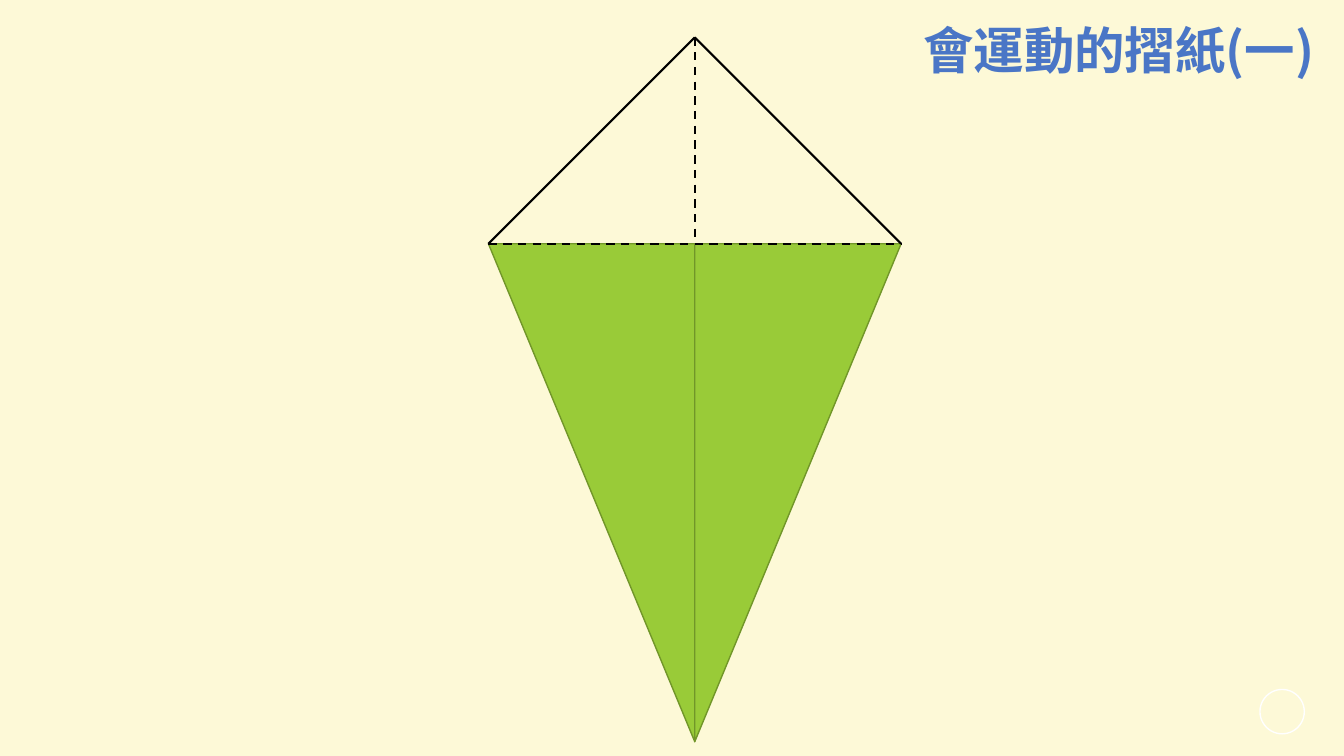
import pptx
import pptx.dml.color
import pptx.enum.dml
import pptx.enum.shapes
import pptx.oxml
import pptx.oxml.ns
import pptx.util

Pt = pptx.util.Pt
RGBColor = pptx.dml.color.RGBColor

CREAM = RGBColor(0xFD, 0xF9, 0xD7)
WHITE = RGBColor(0xFF, 0xFF, 0xFF)
BLACK = RGBColor(0x00, 0x00, 0x00)
BLUE = RGBColor(0x4A, 0x76, 0xC6)
GREEN = RGBColor(0x99, 0xCB, 0x38)
DARK_GREEN = RGBColor(0x71, 0x96, 0x29)
FONT = "Noto Sans CJK SC"

# Corners of the folded kite, in points
CENTER_X, HALF_WIDTH, FOLD_Y = 496.3, 147.4, 174.1
TOP = (CENTER_X, FOLD_Y - HALF_WIDTH)
LEFT = (CENTER_X - HALF_WIDTH, FOLD_Y)
MIDDLE = (CENTER_X, FOLD_Y)
RIGHT = (CENTER_X + HALF_WIDTH, FOLD_Y)
BOTTOM = (CENTER_X, 529.8)


def to_points(corner):
    return tuple(Pt(value) for value in corner)


def add_text(slide, text, left, top, width, height, size, color, bold=False, spacing=1.0):
    box = slide.shapes.add_textbox(Pt(left), Pt(top), Pt(width), Pt(height))
    box.text_frame.word_wrap = True
    para = box.text_frame.paragraphs[0]
    para.line_spacing = spacing
    span = para.add_run()
    span.text = text
    span.font.size = Pt(size)
    span.font.bold = bold
    span.font.color.rgb = color
    span.font.name = FONT
    # East Asian characters take their own typeface entry
    east_asian = pptx.oxml.parse_xml(
        f'<a:ea {pptx.oxml.ns.nsdecls("a")} typeface="{FONT}"/>')
    span.font._element.find(pptx.oxml.ns.qn("a:latin")).addnext(east_asian)


def add_edge(slide, start, end, dashed=False):
    edge = slide.shapes.add_connector(
        pptx.enum.shapes.MSO_CONNECTOR.STRAIGHT, *to_points(start), *to_points(end))
    edge.line.color.rgb = BLACK
    edge.line.width = Pt(1.5)
    if dashed:
        edge.line.dash_style = pptx.enum.dml.MSO_LINE.DASH
    edge._element.spPr.append(
        pptx.oxml.parse_xml(f'<a:effectLst {pptx.oxml.ns.nsdecls("a")}/>'))


def add_flap(slide, *corners):
    first, *others = [to_points(corner) for corner in corners]
    builder = slide.shapes.build_freeform(*first)
    builder.add_line_segments(others, close=True)
    flap = builder.convert_to_shape()
    flap.shadow.inherit = False
    flap.fill.solid()
    flap.fill.fore_color.rgb = GREEN
    flap.line.color.rgb = DARK_GREEN
    flap.line.width = Pt(1)


def add_ring(slide, left, top, size):
    ring = slide.shapes.add_shape(
        pptx.enum.shapes.MSO_SHAPE.OVAL, Pt(left), Pt(top), Pt(size), Pt(size))
    ring.shadow.inherit = False
    ring.fill.background()
    ring.line.color.rgb = WHITE
    ring.line.width = Pt(1)


def main():
    deck = pptx.Presentation()
    deck.slide_width, deck.slide_height = Pt(960), Pt(540)
    page = deck.slides.add_slide(deck.slide_layouts[6])
    page.background.fill.solid()
    page.background.fill.fore_color.rgb = CREAM

    # Corner ring and title
    add_ring(page, 900, 492.5, 31.7)
    add_text(page, "會運動的摺紙(一)", 652.4, 15.2, 294.5, 51,
             size=36, color=BLUE, bold=True, spacing=0.9)

    # Center crease, partly covered by the two flaps
    add_edge(page, TOP, BOTTOM, dashed=True)
    for side in (LEFT, RIGHT):
        add_flap(page, MIDDLE, side, BOTTOM)

    # Open upper corner and fold line
    for side in (LEFT, RIGHT):
        add_edge(page, side, TOP)
    add_edge(page, LEFT, RIGHT, dashed=True)

    deck.save("out.pptx")


if __name__ == "__main__":
    main()
